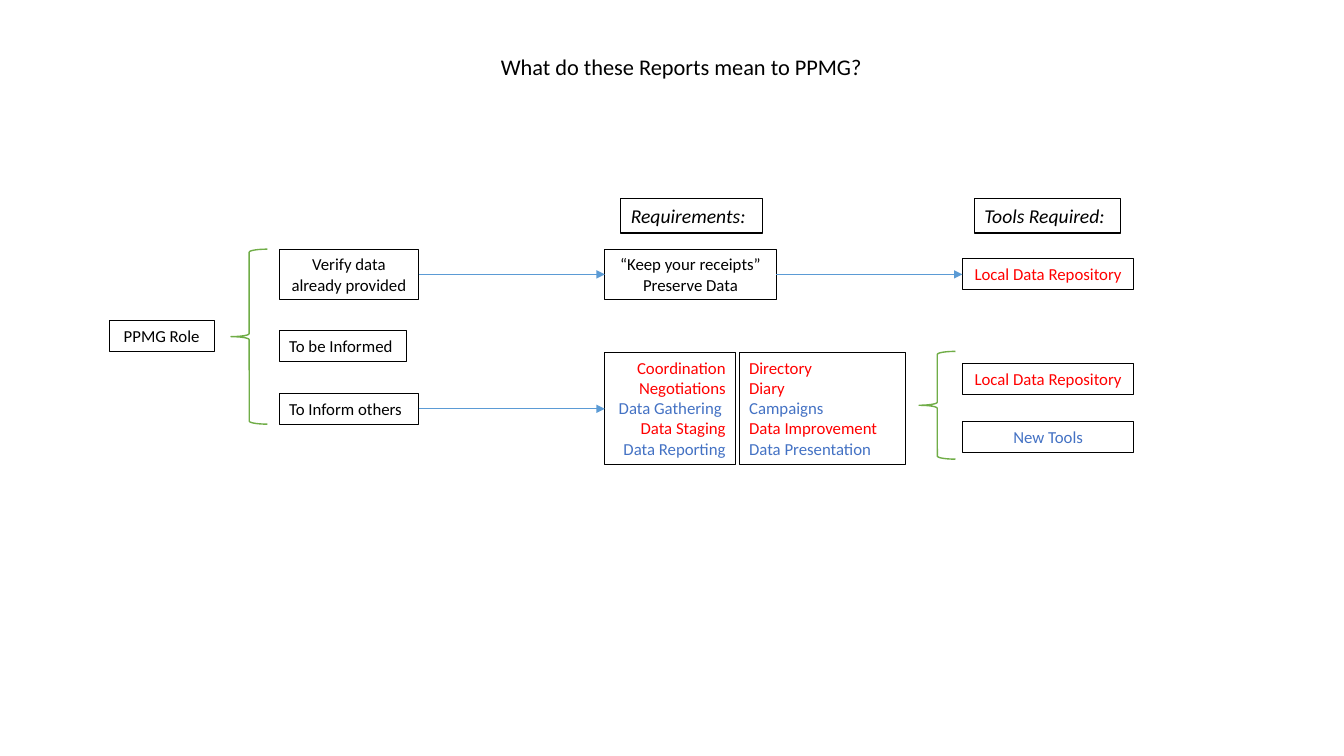
from dataclasses import dataclass
from lxml.etree import SubElement
from pptx import Presentation
from pptx.dml.color import RGBColor
from pptx.enum.shapes import MSO_CONNECTOR, MSO_SHAPE
from pptx.enum.text import MSO_ANCHOR, MSO_AUTO_SIZE, PP_ALIGN
from pptx.oxml.ns import qn
from pptx.util import Pt


@dataclass(frozen=True)
class Theme:
    font: str = "Calibri"
    title: int = 16
    head: int = 14
    body: int = 12
    black: RGBColor = RGBColor(0, 0, 0)
    red: RGBColor = RGBColor(0xFF, 0, 0)
    blue: RGBColor = RGBColor(0x44, 0x72, 0xC4)
    arrow: RGBColor = RGBColor(0x5B, 0x9B, 0xD5)
    brace: RGBColor = RGBColor(0x70, 0xAD, 0x47)


T = Theme()
ROW = 22  # height of a one-line box
TALL = 36  # height of a two-line box
LEFT, MID, RIGHT = PP_ALIGN.LEFT, PP_ALIGN.CENTER, PP_ALIGN.RIGHT


def style(para, size, color, italic=False):
    for run in para.runs:
        font = run.font
        font.name, font.size, font.italic = T.font, Pt(size), italic
        font.color.rgb = color


def add_box(slide, x, y, w, h, lines, align=MID, size=T.body, italic=False):
    """Outlined text box; lines are (text, color) pairs."""
    box = slide.shapes.add_textbox(Pt(x), Pt(y), Pt(w), Pt(h))
    box.line.color.rgb = T.black
    box.line.width = Pt(0.75)
    frame = box.text_frame
    frame.word_wrap = True
    frame.auto_size = MSO_AUTO_SIZE.SHAPE_TO_FIT_TEXT
    frame.text = "\n".join(text for text, _ in lines)
    for para, (_, color) in zip(frame.paragraphs, lines):
        para.alignment = align
        style(para, size, color, italic)
    return box


def add_head(slide, x, y, w, text):
    box = add_box(slide, x, y, w, 24.5, [(text, T.black)], LEFT, T.head, True)
    box.text_frame.word_wrap = False


def add_brace(slide, x, y, h):
    brace = slide.shapes.add_shape(
        MSO_SHAPE.LEFT_BRACE, Pt(x), Pt(y), Pt(26), Pt(h))
    brace.shadow.inherit = False
    brace.fill.background()
    brace.line.color.rgb = T.brace
    brace.line.width = Pt(1)


def add_arrow(slide, start, end):
    """Arrow from the right side of one box to the left side of another."""
    arrow = slide.shapes.add_connector(MSO_CONNECTOR.STRAIGHT, 0, 0, 0, 0)
    arrow.begin_connect(start, 3)
    arrow.end_connect(end, 1)
    arrow.line.color.rgb = T.arrow
    arrow.line.width = Pt(1)
    SubElement(arrow.line._get_or_add_ln(), qn("a:tailEnd"), type="triangle")
    SubElement(arrow._element.spPr, qn("a:effectLst"))


def add_title(slide, x, y, w, h):
    title = slide.shapes.title
    title.left, title.top, title.width, title.height = map(Pt, (x, y, w, h))
    frame = title.text_frame
    frame.text = "What do these Reports mean to PPMG?"
    frame.vertical_anchor = MSO_ANCHOR.MIDDLE
    para = frame.paragraphs[0]
    para.alignment = LEFT
    para.line_spacing = 0.9
    style(para, T.title, T.black)


def add_roles(slide, x, y, w, h):
    """Role, brace and its three duties; returns the first and last duty."""
    add_box(slide, x, y + 51, 75, ROW, [("PPMG Role", T.black)])
    add_brace(slide, x + 87, y, h)
    left, wide = x + 121.5, w - 121.5
    verify = add_box(slide, left, y, wide, TALL,
                     [("Verify data already provided", T.black)])
    add_box(slide, left, y + 58, 91, ROW, [("To be Informed", T.black)], LEFT)
    inform = add_box(slide, left, y + h - ROW, wide, ROW,
                     [("To Inform others", T.black)], LEFT)
    return verify, inform


def add_needs(slide, x, y, w, h):
    """Requirements column; returns the boxes the arrows reach."""
    add_head(slide, x + 11.5, y, 101, "Requirements:")
    keep = add_box(slide, x, y + 36, 122.5, TALL,
                   [("“Keep your receipts”", T.black),
                    ("Preserve Data", T.black)])
    top, tall = y + h - 80, 80
    tasks = add_box(slide, x, top, 93.5, tall,
                    [("Coordination", T.red), ("Negotiations", T.red),
                     ("Data Gathering ", T.blue), ("Data Staging", T.red),
                     ("Data Reporting", T.blue)], RIGHT)
    add_box(slide, x + w - 119, top, 119, tall,
            [("Directory", T.red), ("Diary", T.red), ("Campaigns", T.blue),
             ("Data Improvement", T.red), ("Data Presentation", T.blue)], LEFT)
    return keep, tasks


def add_tools(slide, x, y, w, h):
    """Tools column; returns the box beside the first requirement."""
    left, wide = x + 31, w - 31
    add_head(slide, left + 8.5, y, 104.5, "Tools Required:")
    store = ("Local Data Repository", T.red)
    first = add_box(slide, left, y + 43, wide, ROW, [store])
    add_brace(slide, x, y + h - 77, 77)
    add_box(slide, left, y + 118, wide, ROW, [store])
    add_box(slide, left, y + 159, wide, ROW, [("New Tools", T.blue)])
    return first


def main():
    deck = Presentation()
    deck.slide_width, deck.slide_height = Pt(960), Pt(540)
    slide = deck.slides.add_slide(deck.slide_layouts[5])

    # Title and the three columns
    add_title(slide, 350.5, 19, 281, 60)
    verify, inform = add_roles(slide, 78, 178, 221, 125)
    keep, tasks = add_needs(slide, 432, 142, 215, 190)
    store = add_tools(slide, 656.5, 142, 153.5, 186)

    # Arrows between columns
    for start, end in ((verify, keep), (inform, tasks), (keep, store)):
        add_arrow(slide, start, end)

    deck.save("out.pptx")


if __name__ == "__main__":
    main()
